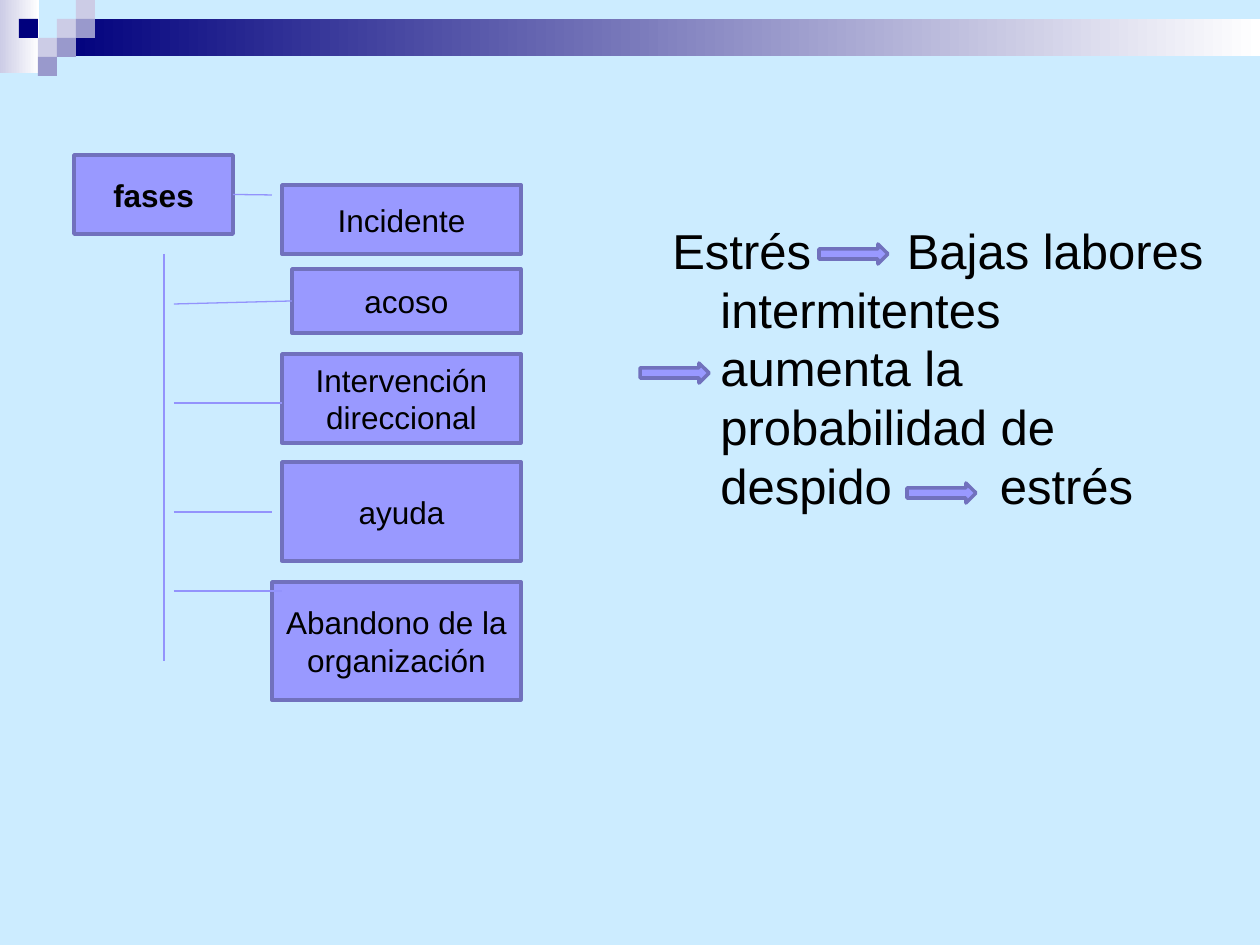
from lxml import etree
from pptx import Presentation, util as u
from pptx.dml.color import RGBColor
from pptx.enum import shapes, text
from pptx.oxml.ns import qn

PX = u.Inches(1) / 126
FONT = "Arial"
LILAC, PURPLE, LINE = "9999FF", "7171BD", "9393FC"
NAVY, PALE, MID, WHITE = "00007D", "CCCCE6", "9999CC", "FFFFFF"
TILE = 19


def px(n):
    return u.Emu(round(n * PX))


def rgb(value):
    return RGBColor.from_string(value)


def add_shape(s, kind, box, fill, line=None):
    sp = s.shapes.add_shape(kind, *map(px, box))
    sp.shadow.inherit = False
    sp.fill.solid()
    sp.fill.fore_color.rgb = rgb(fill)
    if line:
        sp.line.color.rgb = rgb(line)
        sp.line.width = u.Pt(2)
    else:
        sp.line.fill.background()
    return sp


def add_fade(s, box, start):
    """Rectangle that fades from a colour on the left to white."""
    sp = add_shape(s, shapes.MSO_SHAPE.RECTANGLE, box, start)
    sp.fill.gradient()
    sp.fill.gradient_angle = 0
    for stop, color, position in zip(sp.fill.gradient_stops, (start, WHITE), (0, 1)):
        stop.color.rgb = rgb(color)
        stop.position = position


def set_font(p, size, bold=False):
    p.font.name = FONT
    p.font.size = u.Pt(size)
    p.font.bold = bold
    p.font.color.rgb = rgb("000000")


def add_box(s, label, box, bold=False):
    sp = add_shape(s, shapes.MSO_SHAPE.RECTANGLE, box, LILAC, PURPLE)
    tf = sp.text_frame
    tf.word_wrap = True
    tf.vertical_anchor = text.MSO_ANCHOR.MIDDLE
    p = tf.paragraphs[0]
    p.text = label
    p.alignment = text.PP_ALIGN.CENTER
    set_font(p, 18, bold)
    return sp


def add_line(s, x1, y1, x2, y2):
    c = s.shapes.add_connector(shapes.MSO_CONNECTOR.STRAIGHT, *map(px, (x1, y1, x2, y2)))
    c.line.color.rgb = rgb(LINE)
    c.line.width = u.Pt(0.75)
    etree.SubElement(c._element.spPr, qn("a:effectLst"))
    return c


def add_header(s):
    add_fade(s, (0, 0, 39, 73), PALE)
    add_fade(s, (57, 19, 1203, 37), NAVY)
    tiles = [(3, 1, PALE), (4, 0, PALE), (4, 1, MID), (2, 2, PALE),
             (1, 1, NAVY), (3, 2, MID), (2, 3, MID)]
    for col, row, color in tiles:
        box = (col * TILE, row * TILE, TILE, TILE)
        add_shape(s, shapes.MSO_SHAPE.RECTANGLE, box, color)


def add_consequences(s):
    tf = s.shapes.add_textbox(*map(px, (660, 214, 566, 610))).text_frame
    tf.word_wrap = True
    p = tf.paragraphs[0]
    set_font(p, 28)
    p.space_before = u.Pt(5.6)
    pPr = p._p.get_or_add_pPr()
    pPr.set("marL", str(px(48)))
    pPr.set("indent", str(-px(48)))
    # A gap is one widely spaced blank that leaves room for an arrow.
    pieces = [("Estrés", 0), (" ", 47), ("Bajas labores intermitentes", 0), None,
              ("aumenta la probabilidad de despido", 0), (" ", 54), ("estrés", 0)]
    for piece in pieces:
        if piece is None:
            p.add_line_break()
            continue
        r = p.add_run()
        r.text, gap = piece
        if gap:
            r.font._element.set("spc", str(gap * 100))
    for x, y in [(819, 244), (640, 363), (907, 483)]:
        add_shape(s, shapes.MSO_SHAPE.RIGHT_ARROW, (x, y, 69, 20), LILAC, PURPLE)


def add_phases(s):
    root = add_box(s, "fases", (74, 155, 159, 79), bold=True)
    phases = [("Incidente", 282, 185, 69), ("acoso", 292, 269, 64),
              ("Intervención direccional", 282, 354, 89),
              ("ayuda", 282, 462, 99), ("Abandono de la organización", 272, 582, 118)]
    right = 521
    boxes = {label: add_box(s, label, (x, y, right - x, h)) for label, x, y, h in phases}

    add_line(s, 164, 254, 164, 661)
    add_line(s, 174, 304, 292, 301).end_connect(boxes["acoso"], 1)
    for y, end in [(403, 282), (512, 272), (591, 282)]:
        add_line(s, 174, y, end, y)
    add_line(s, 233, 195, 272, 195).begin_connect(root, 3)


def main():
    prs = Presentation()
    prs.slide_width, prs.slide_height = u.Inches(10), u.Inches(7.5)
    s = prs.slides.add_slide(prs.slide_layouts[6])
    s.background.fill.solid()
    s.background.fill.fore_color.rgb = rgb("CCECFF")
    add_header(s)
    add_phases(s)
    add_consequences(s)
    prs.save("out.pptx")


if __name__ == "__main__":
    main()
